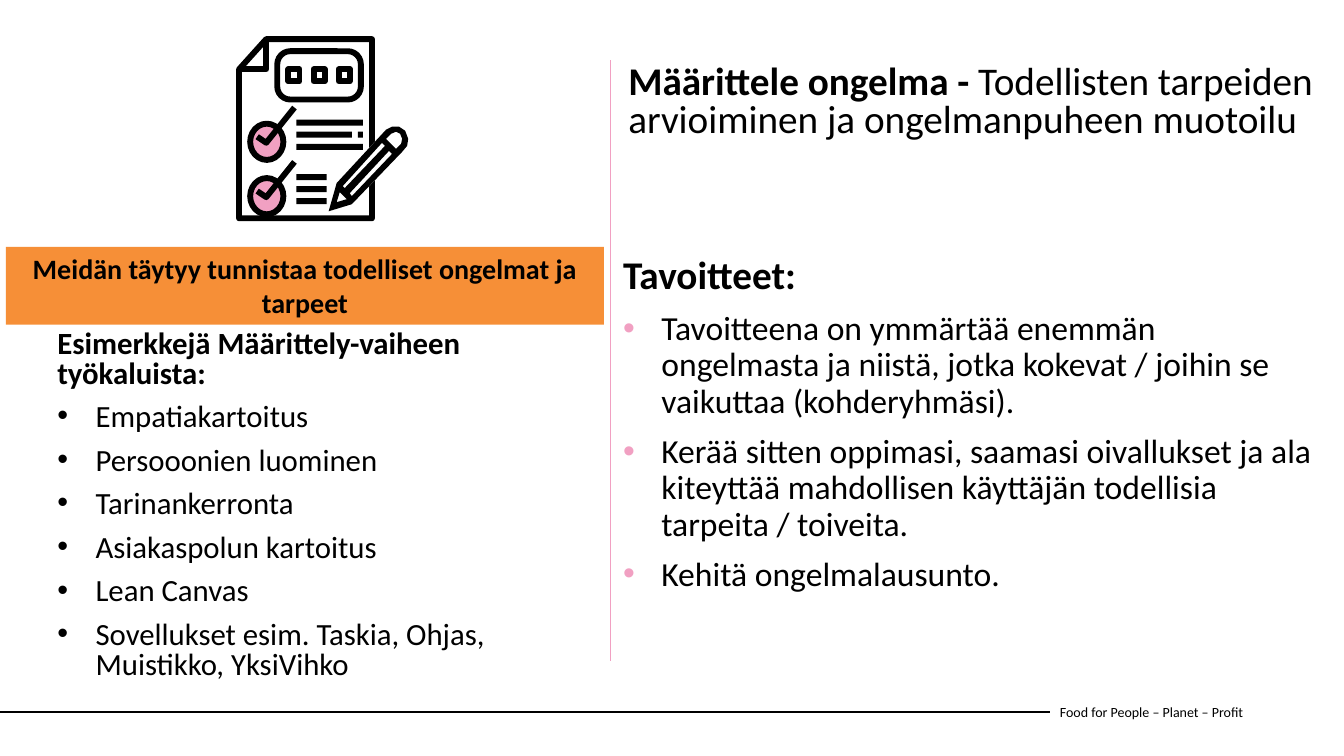
from lxml.etree import SubElement
from pptx import Presentation
from pptx.dml.color import RGBColor
from pptx.enum.shapes import MSO_CONNECTOR as CONN, MSO_SHAPE as SHAPE
from pptx.enum.text import MSO_ANCHOR as ANCHOR, MSO_AUTO_SIZE as AUTO, PP_ALIGN as ALIGN
from pptx.oxml.ns import qn
from pptx.util import Inches, Pt

COLS, ROWS = 160, 90
W, H = Inches(13.33), Inches(7.5)
BLACK, WHITE, PINK, ORANGE = "000000", "FFFFFF", "F1A0C2", "F68F37"
ICON_COLS, ICON_STROKE = 171, 4.2


def color(value):
    return RGBColor.from_string(value)


def place(x, y, w, h):
    return [round(v) for v in (x * W / COLS, y * H / ROWS, w * W / COLS, h * H / ROWS)]


def paint(sp, fill=None, line=None, width=ICON_STROKE):
    sp.shadow.inherit = False
    if fill:
        sp.fill.solid()
        sp.fill.fore_color.rgb = color(fill)
    else:
        sp.fill.background()
    if line:
        sp.line.color.rgb = color(line)
        sp.line.width = Pt(width)
    else:
        sp.line.fill.background()


def add_text(p, text, size=24, bold=False):
    r = p.add_run()
    r.text = text
    f = r.font
    f.name, f.size, f.bold = "Calibri", Pt(size), bold
    f.color.rgb = color(BLACK)


def set_spacing(p, spacing):
    p.line_spacing = spacing
    p.space_before = Pt(10)


def set_bullet(p, bullet_color):
    pPr = p._p.get_or_add_pPr()
    pPr.set("marL", str(Inches(0.38)))
    pPr.set("indent", str(-Inches(0.38)))
    clr = SubElement(pPr, qn("a:buClr"))
    SubElement(clr, qn("a:srgbClr")).set("val", bullet_color)
    SubElement(pPr, qn("a:buFont")).set("typeface", "Arial")
    SubElement(pPr, qn("a:buChar")).set("char", "•")


def add_rule(s, x1, y1, x2, y2, line, width):
    x, y, dx, dy = place(x1, y1, x2 - x1, y2 - y1)
    cx = s.shapes.add_connector(CONN.STRAIGHT, x, y, x + dx, y + dy)
    cx.line.color.rgb = color(line)
    cx.line.width = Pt(width)
    SubElement(cx._element.spPr, qn("a:effectLst"))


def add_box(s, box, anchor=ANCHOR.TOP):
    tf = s.shapes.add_textbox(*place(*box)).text_frame
    tf.word_wrap = True
    tf.vertical_anchor = anchor
    return tf


def add_title(s, box, lead, rest):
    sp = s.shapes.title
    sp.left, sp.top, sp.width, sp.height = place(*box)
    tf = sp.text_frame
    tf.word_wrap, tf.auto_size, tf.vertical_anchor = True, AUTO.NONE, ANCHOR.TOP
    p = tf.paragraphs[0]
    p.alignment = ALIGN.LEFT
    set_spacing(p, 0.8)
    add_text(p, lead, size=28, bold=True)
    add_text(p, rest, size=28)


def add_list(s, box, heading, items, head_size, size, spacing, bullet_color):
    tf = add_box(s, box)
    p = tf.paragraphs[0]
    set_spacing(p, spacing)
    add_text(p, heading, size=head_size, bold=True)
    for item in items:
        p = tf.add_paragraph()
        set_spacing(p, spacing)
        set_bullet(p, bullet_color)
        add_text(p, item, size=size)


def add_banner(s, box, text):
    sp = s.shapes.add_shape(SHAPE.RECTANGLE, *place(*box))
    paint(sp, fill=ORANGE)
    tf = sp.text_frame
    tf.word_wrap, tf.vertical_anchor = True, ANCHOR.TOP
    p = tf.paragraphs[0]
    p.alignment = ALIGN.CENTER
    add_text(p, text, size=20, bold=True)


def add_footer(s, box, text):
    x, y, w, h = box
    add_rule(s, 0, y + h / 2, x, y + h / 2, BLACK, 1.5)
    add_text(add_box(s, box, ANCHOR.MIDDLE).paragraphs[0], text, size=10)


def add_checklist_icon(s, box):
    left, top, width, height = place(*box)
    unit = width / ICON_COLS

    def outline(contours, closed=True, **style):
        fb = None
        for pts in contours:
            pts = [(left + x * unit, top + y * unit) for x, y in pts]
            if fb is None:
                fb = s.shapes.build_freeform(*pts[0])
            else:
                fb.move_to(*pts[0])
            fb.add_line_segments(pts[1:], close=closed)
        paint(fb.convert_to_shape(), **style)

    def preset(kind, x, y, w, h, **style):
        sp = s.shapes.add_shape(kind, *[round(v) for v in (
            left + x * unit, top + y * unit, w * unit, h * unit)])
        paint(sp, **style)
        return sp

    outline([[(30, 3), (135, 3), (135, 181), (3, 181), (3, 33)]], line=BLACK)
    outline([[(30, 3), (30, 33), (3, 33)]], closed=False, line=BLACK)
    panel = preset(SHAPE.ROUNDED_RECTANGLE, 41, 15, 83, 48, line=BLACK)
    panel.adjustments[0] = 0.27
    for i in range(3):
        preset(SHAPE.RECTANGLE, 52 + 25 * i, 33, 11, 12, line=BLACK)
    for y in (84, 138):
        preset(SHAPE.OVAL, 14, y + 3, 33, 36, fill=PINK, line=BLACK)
        outline([[(21, y + 16), (30, y + 22), (58, y - 13)]], closed=False, line=BLACK)
    bars = [(83, 66), (95, 55), (107, 66), (137, 30), (149, 30), (161, 30)]
    for y, length in bars:
        preset(SHAPE.RECTANGLE, 60, y, length, 6, fill=BLACK)
    preset(SHAPE.RECTANGLE, 121, 95, 5, 6, fill=BLACK)
    body = [(92, 174), (100, 146), (149, 93), (155, 90), (162, 90), (168, 94),
            (171, 102), (170, 109), (165, 115), (115, 167)]
    cap = [(159, 112), (164, 107), (165, 102), (163, 97), (159, 95), (154, 97), (149, 102)]
    upper = [(145, 106), (106, 149), (108, 151), (148, 109)]
    lower = [(115, 159), (155, 117), (152, 114), (113, 156)]
    tip = [(103, 155), (100, 165), (110, 162)]
    outline([body], fill=WHITE)
    outline([body, cap, upper, lower, tip], fill=BLACK)


def build_slide(prs):
    s = prs.slides.add_slide(prs.slide_layouts[5])
    add_footer(s, (125, 82.4, 32.8, 4.8), "Food for People – Planet – Profit")
    add_list(s, (73, 29.8, 84.7, 48.8), "Tavoitteet:", [
        "Tavoitteena on ymmärtää enemmän ongelmasta ja niistä, jotka kokevat / "
        "joihin se vaikuttaa (kohderyhmäsi).",
        "Kerää sitten oppimasi, saamasi oivallukset ja ala kiteyttää mahdollisen "
        "käyttäjän todellisia tarpeita / toiveita.",
        "Kehitä ongelmalausunto.",
    ], head_size=28, size=24, spacing=0.9, bullet_color=PINK)
    add_title(s, (73.6, 7.2, 84, 15), "Määrittele ongelma - ",
              "Todellisten tarpeiden arvioiminen ja ongelmanpuheen muotoilu")
    add_list(s, (5.64, 38.8, 65.4, 45.1), "Esimerkkejä Määrittely-vaiheen työkaluista:", [
        "Empatiakartoitus",
        "Persooonien luominen",
        "Tarinankerronta",
        "Asiakaspolun kartoitus",
        "Lean Canvas",
        "Sovellukset esim. Taskia, Ohjas, Muistikko, YksiVihko",
    ], head_size=22, size=22, spacing=0.8, bullet_color=BLACK)
    add_banner(s, (0.7, 29.4, 71.2, 9.25),
               "Meidän täytyy tunnistaa todelliset ongelmat ja tarpeet")
    add_checklist_icon(s, (28.1, 4.3, 20.5, 22.1))
    add_rule(s, 72.7, 7.2, 72.7, 78.7, PINK, 0.5)


def main():
    prs = Presentation()
    prs.slide_width, prs.slide_height = W, H
    build_slide(prs)
    prs.save("out.pptx")


if __name__ == "__main__":
    main()
